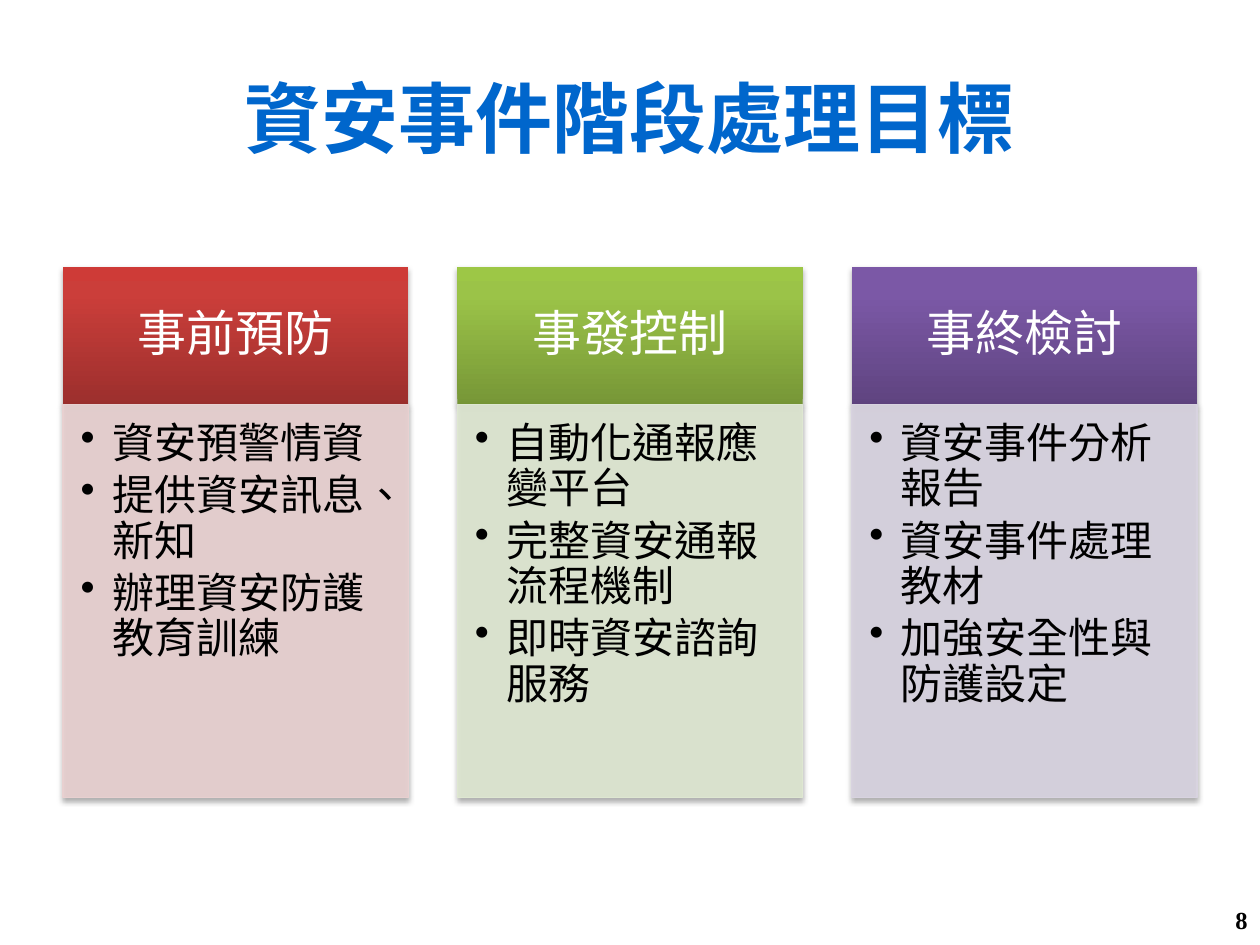
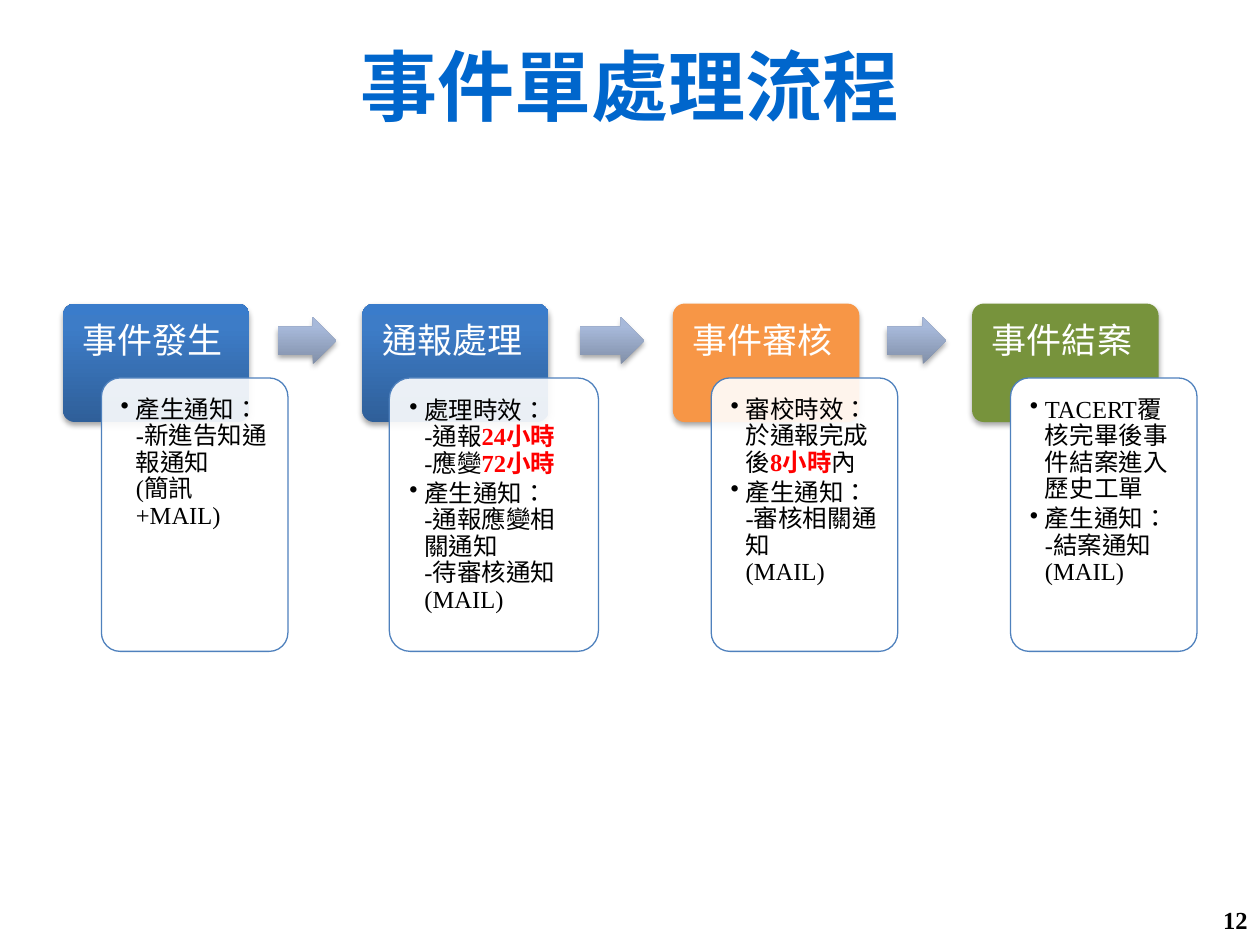
from copy import deepcopy
from dataclasses import dataclass, field
from typing import NamedTuple

from lxml import etree
from pptx import Presentation
from pptx import util as u
from pptx.dml.color import RGBColor
from pptx.enum import lang, shapes, text
from pptx.oxml.ns import qn

KIND = shapes.MSO_SHAPE
ALIGN = text.PP_ALIGN
ANCHOR = text.MSO_ANCHOR
WIDE, HIGH = u.Inches(10), u.Inches(7.5)
COLS, ROWS = 100, 75


@dataclass(frozen=True)
class Theme:
    face: str = "Times New Roman"
    title: str = "0066CC"
    ink: str = "000000"
    white: str = "FFFFFF"
    alert: str = "FF0000"
    edge: str = "4F81BD"
    red: tuple = ("9C2F2D", "CB3E3A", "CE3B37")
    green: tuple = ("779737", "9BC348", "9DC746")
    purple: tuple = ("5F4480", "7B58A6", "7C57A8")
    blue: tuple = ("2F5F99", "3D7CC7", "3A7CCB")
    steel: tuple = ("818FA8", "A7B9DA", "A7BADC")
    orange: tuple = ("F79646",)
    olive: tuple = ("77933C",)
    big: int = 44
    head: int = 28
    list: int = 24
    step: int = 20
    note: int = 14


THEME = Theme()


class Box(NamedTuple):
    x: float
    y: float
    w: float
    h: float

    def place(self) -> tuple:
        dx, dy = WIDE / COLS, HIGH / ROWS
        return tuple(int(v) for v in (self.x * dx, self.y * dy, self.w * dx, self.h * dy))


@dataclass(frozen=True)
class Look:
    fill: tuple
    kind: int = KIND.RECTANGLE
    adj: tuple = ()
    alpha: int = 100
    line: str = ""
    shade: bool = True


@dataclass(frozen=True)
class Type:
    size: int
    color: str = THEME.ink
    bold: bool = False
    align: int = ALIGN.LEFT
    anchor: int = ANCHOR.TOP
    pad: tuple = (0.1, 0.05, 0.1, 0.05)
    hang: float = 0
    pitch: float = 1


class Phase(NamedTuple):
    name: str
    fill: tuple
    tint: str
    items: list


@dataclass(frozen=True)
class Step:
    name: str
    fill: tuple
    items: list = field(default_factory=list)
    wide: float = 14.8
    alpha: int = 90


def fade(node, alpha: int) -> None:
    if alpha < 100:
        etree.SubElement(node, qn("a:alpha")).set("val", str(alpha * 1000))


def paint(shape, look: Look) -> None:
    fill = shape.fill
    props = shape._element.spPr
    if len(look.fill) == 1:
        fill.solid()
        fill.fore_color.rgb = RGBColor.from_string(look.fill[0])
    else:
        fill.gradient()
        fill.gradient_angle = 90
        stops = props.find(".//" + qn("a:gsLst"))
        stops.append(deepcopy(stops[0]))
        for stop, color, spot in zip(fill.gradient_stops, look.fill, (0, 0.8, 1)):
            stop.color.rgb = RGBColor.from_string(color)
            stop.position = spot
    if look.line:
        shape.line.color.rgb = RGBColor.from_string(look.line)
        shape.line.width = u.Pt(0.75)
    else:
        shape.line.fill.background()
    for node in props.findall(qn("a:solidFill") + "/" + qn("a:srgbClr")):
        fade(node, look.alpha)
    shape.shadow.inherit = False
    if look.shade:
        glow = etree.SubElement(props.find(qn("a:effectLst")), qn("a:outerShdw"))
        for key, val in dict(blurRad=40000, dist=23000, dir=5400000, rotWithShape=0).items():
            glow.set(key, str(val))
        tone = etree.SubElement(glow, qn("a:srgbClr"))
        tone.set("val", THEME.ink)
        fade(tone, 35)


def style(run, kind: Type, hot: bool = False) -> None:
    font = run.font
    font.name = THEME.face
    font.size = u.Pt(kind.size)
    font.bold = hot or kind.bold
    font.color.rgb = RGBColor.from_string(THEME.alert if hot else kind.color)
    font.language_id = lang.MSO_LANGUAGE_ID.TRADITIONAL_CHINESE


def bullet(para, hang: float) -> None:
    props = para._p.get_or_add_pPr()
    props.set("marL", str(u.Inches(hang)))
    props.set("indent", str(-u.Inches(hang)))
    etree.SubElement(props, qn("a:buChar")).set("char", "•")


def write(shape, items: list, kind: Type) -> None:
    frame = shape.text_frame
    frame.word_wrap = True
    frame.vertical_anchor = kind.anchor
    (frame.margin_left, frame.margin_top,
     frame.margin_right, frame.margin_bottom) = map(u.Inches, kind.pad)
    for i, item in enumerate(items):
        para = frame.add_paragraph() if i else frame.paragraphs[0]
        if kind.hang:
            bullet(para, kind.hang)
            para.space_after = u.Pt(round(kind.size / 6))
        para.alignment = kind.align
        para.line_spacing = kind.pitch
        for j, line in enumerate(item.split("\n")):
            if j:
                para.add_line_break()
            for k, part in enumerate(line.split("*")):
                if part:
                    run = para.add_run()
                    run.text = part
                    style(run, kind, k % 2 == 1)


def draw(slide, box: Box, look: Look):
    shape = slide.shapes.add_shape(look.kind, *box.place())
    for i, val in enumerate(look.adj):
        shape.adjustments[i] = val
    paint(shape, look)
    return shape


def start(deck, title: str, top: float, page: int):
    slide = deck.slides.add_slide(deck.slide_layouts[5])
    head = slide.shapes.title
    head.left, head.top, head.width, head.height = Box(5, top, 90, 12.5).place()
    write(head, [title], Type(THEME.big, THEME.title, True, ALIGN.CENTER, ANCHOR.MIDDLE))
    foot = slide.shapes.add_textbox(*Box(76.7, 71, 23.3, 4).place())
    write(foot, [str(page)], Type(THEME.note, bold=True, align=ALIGN.RIGHT, anchor=ANCHOR.MIDDLE))
    return slide


PHASES = [
    Phase("事前預防", THEME.red, "E8D0D0",
          ["資安預警情資", "提供資安訊息、新知", "辦理資安防護教育訓練"]),
    Phase("事發控制", THEME.green, "DEE7D1",
          ["自動化通報應變平台", "完整資安通報流程機制", "即時資安諮詢服務"]),
    Phase("事終檢討", THEME.purple, "D8D3E0",
          ["資安事件分析報告", "資安事件處理教材", "加強安全性與防護設定"]),
]

STEPS = [
    Step("事件發生", THEME.blue, ["產生通知：\n-新進告知通報通知\n(簡訊+MAIL)"]),
    Step("通報處理", THEME.blue,
         ["處理時效：\n-通報*24小時*\n-應變*72小時*",
          "產生通知：\n-通報應變相關通知\n-待審核通知\n(MAIL)"], wide=16.6),
    Step("事件審核", THEME.orange,
         ["審校時效：\n於通報完成後*8小時*內", "產生通知：\n-審核相關通知\n(MAIL)"]),
    Step("事件結案", THEME.olive,
         ["TACERT覆核完畢後事件結案進入 歷史工單", "產生通知：\n-結案通知(MAIL)"], alpha=100),
]


def goals(deck) -> None:
    slide = start(deck, "資安事件階段處理目標", 3, 8)
    wide, top, cap, body = 27.4, 21.2, 10.9, 31.2
    pitch = (90 - wide) / (len(PHASES) - 1)
    label = Type(THEME.head, THEME.white, align=ALIGN.CENTER, anchor=ANCHOR.MIDDLE,
                 pad=(0.22, 0.12, 0.22, 0.12), pitch=0.9)
    points = Type(THEME.list, pad=(0.14, 0.14, 0.19, 0.21), hang=0.25, pitch=0.9)
    for i, phase in enumerate(PHASES):
        x = 5 + i * pitch
        head = draw(slide, Box(x, top, wide, cap), Look(phase.fill))
        write(head, [phase.name], label)
        card = draw(slide, Box(x, top + cap, wide, body),
                    Look((phase.tint,), alpha=90, line=phase.tint))
        write(card, phase.items, points)


def flow(deck) -> None:
    slide = start(deck, "事件單處理流程", 0.5, 12)
    wide, shift, gap = 14.8, 3.05, 5.9
    label = Type(THEME.step, THEME.white, pad=(0.13, 0.13, 0.13, 0.08), pitch=0.9)
    points = Type(THEME.note, pad=(0.11,) * 4, hang=0.12, pitch=0.9)
    x = 5
    for step in STEPS:
        head = draw(slide, Box(x, 24.1, wide, 9.4),
                    Look(step.fill, KIND.ROUNDED_RECTANGLE, (0.1,)))
        write(head, [step.name], label)
        left = x + shift - (step.wide - wide) / 2
        card = draw(slide, Box(left, 30, step.wide, 21.7),
                    Look((THEME.white,), KIND.ROUNDED_RECTANGLE, (0.1,),
                         step.alpha, THEME.edge, False))
        write(card, step.items, points)
        end = x + wide
        x = left + step.wide + gap
        if step is not STEPS[-1]:
            span = x - end
            draw(slide, Box(end + span / 4, 25.2, span * 0.52, 3.7),
                 Look(THEME.steel, KIND.RIGHT_ARROW, (0.6, 0.5)))


def main() -> None:
    deck = Presentation()
    deck.slide_width, deck.slide_height = WIDE, HIGH
    goals(deck)
    flow(deck)
    deck.save("out.pptx")


if __name__ == "__main__":
    main()
